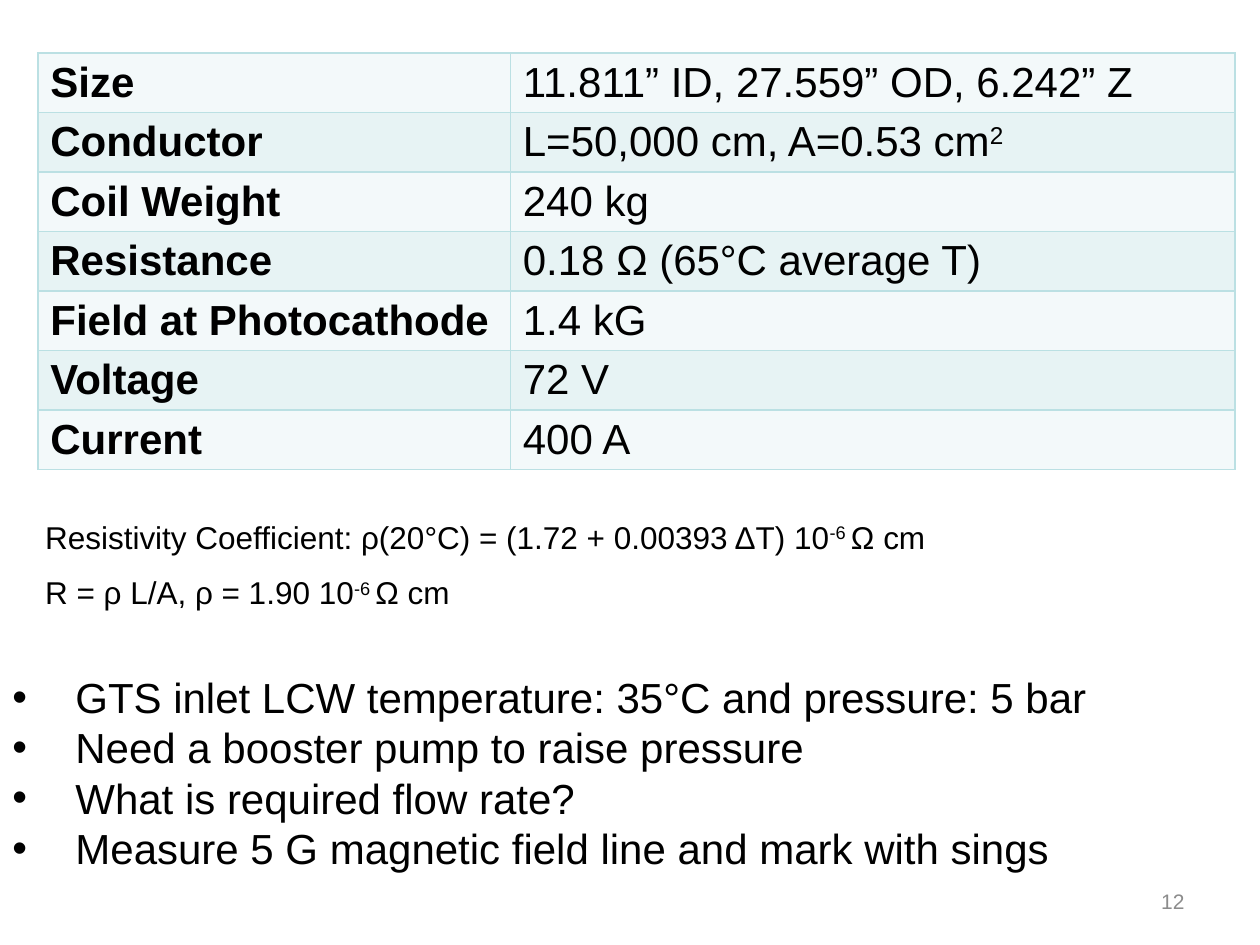
from dataclasses import dataclass

from lxml import etree
from pptx import Presentation
from pptx.dml.color import RGBColor
from pptx.enum.text import MSO_ANCHOR, MSO_AUTO_SIZE, PP_ALIGN
from pptx.oxml.ns import qn
from pptx.util import Emu, Pt

EMU_PER_PX = 9144  # 100 px to the inch
LEFT, RIGHT = PP_ALIGN.LEFT, PP_ALIGN.RIGHT
TOP, MIDDLE = MSO_ANCHOR.TOP, MSO_ANCHOR.MIDDLE
NO_AUTOFIT, GROW = MSO_AUTO_SIZE.NONE, MSO_AUTO_SIZE.SHAPE_TO_FIT_TEXT
FONT = "Arial"
COLORS = {
    "text": "000000",
    "page_number": "8C8C8C",
    "border": "BBE0E3",
    "odd_row": "F3F9FA",
    "even_row": "E7F3F4",
}
COLUMN_WIDTHS = (375, 575)
ROW_HEIGHT = 47
HANGING_INDENT = 50


@dataclass(frozen=True)
class Box:
    left: int
    top: int
    width: int
    height: int


@dataclass(frozen=True)
class Property:
    name: str
    value: str


# Text between carets is superscript.
MAGNET_PROPERTIES = (
    Property("Size", "11.811” ID, 27.559” OD, 6.242” Z"),
    Property("Conductor", "L=50,000 cm, A=0.53 cm^2^"),
    Property("Coil Weight", "240 kg"),
    Property("Resistance", "0.18 Ω (65°C average T)"),
    Property("Field at Photocathode", "1.4 kG"),
    Property("Voltage", "72 V"),
    Property("Current", "400 A"),
)
FORMULAS = (
    (Box(26, 406, 737, 40),
     "Resistivity Coefficient: ρ(20°C) = (1.72 + 0.00393 ΔT) 10^-6 ^Ω cm"),
    (Box(26, 450, 356, 40), "R = ρ L/A, ρ = 1.90 10^-6 ^Ω cm"),
)
COOLING_NOTES = (
    "GTS inlet LCW temperature: 35°C and pressure: 5 bar",
    "Need a booster pump to raise pressure",
    "What is required flow rate?",
    "Measure 5 G magnetic field line and mark with sings",
)


def px(length: int) -> Emu:
    return Emu(length * EMU_PER_PX)


def add_bullet(paragraph) -> None:
    properties = paragraph._p.get_or_add_pPr()
    properties.set("marL", str(px(HANGING_INDENT)))
    properties.set("indent", str(-px(HANGING_INDENT)))
    etree.SubElement(properties, qn("a:buFont")).set("typeface", FONT)
    etree.SubElement(properties, qn("a:buChar")).set("char", "•")


def write_text(text_frame, text: str, *, size: int, color: str = "text",
               bold: bool = False, align=LEFT, bullet: bool = False) -> None:
    """Write one paragraph per line, with text between carets raised."""
    for number, line in enumerate(text.split("\n")):
        paragraph = text_frame.add_paragraph() if number else text_frame.paragraphs[0]
        if bullet:
            add_bullet(paragraph)
        paragraph.alignment = align
        for index, part in enumerate(line.split("^")):
            if not part:
                continue
            run = paragraph.add_run()
            run.text = part
            run.font.name = FONT
            run.font.size = Pt(size)
            run.font.bold = bold
            run.font.color.rgb = RGBColor.from_string(COLORS[color])
            if index % 2:
                run._r.get_or_add_rPr().set("baseline", "30000")


def add_text(slide, box: Box, text: str, *, wrap: bool = False,
             anchor=TOP, auto_size=GROW, **text_format) -> None:
    shape = slide.shapes.add_textbox(px(box.left), px(box.top), px(box.width), px(box.height))
    text_frame = shape.text_frame
    text_frame.word_wrap = wrap
    text_frame.auto_size = auto_size
    text_frame.vertical_anchor = anchor
    write_text(text_frame, text, **text_format)


def format_cell(cell, fill: str) -> None:
    """Give the cell its four borders and its fill."""
    properties = cell._tc.get_or_add_tcPr()
    for side in ("a:lnL", "a:lnR", "a:lnT", "a:lnB"):
        line = etree.SubElement(properties, qn(side), w=str(Pt(1)))
        solid_fill = etree.SubElement(line, qn("a:solidFill"))
        etree.SubElement(solid_fill, qn("a:srgbClr"), val=COLORS["border"])
    cell.fill.solid()
    cell.fill.fore_color.rgb = RGBColor.from_string(COLORS[fill])


def add_property_table(slide, left: int, top: int, properties: tuple[Property, ...]) -> None:
    table = slide.shapes.add_table(
        len(properties), len(COLUMN_WIDTHS), px(left), px(top),
        px(sum(COLUMN_WIDTHS)), px(ROW_HEIGHT * len(properties))).table
    table.first_row = False
    table.horz_banding = False
    for column, width in zip(table.columns, COLUMN_WIDTHS):
        column.width = px(width)
    for row_index, item in enumerate(properties):
        table.rows[row_index].height = px(ROW_HEIGHT)
        fill = "even_row" if row_index % 2 else "odd_row"
        for column_index, text in enumerate((item.name, item.value)):
            cell = table.cell(row_index, column_index)
            format_cell(cell, fill)
            write_text(cell.text_frame, text, size=24, bold=column_index == 0)


def main() -> None:
    presentation = Presentation()
    presentation.slide_width = px(1000)
    presentation.slide_height = px(750)
    slide = presentation.slides.add_slide(presentation.slide_layouts[6])

    add_text(slide, Box(717, 695, 233, 40), "12", wrap=True, anchor=MIDDLE,
             auto_size=NO_AUTOFIT, size=12, color="page_number", align=RIGHT)
    add_property_table(slide, 30, 42, MAGNET_PROPERTIES)
    add_text(slide, Box(0, 528, 889, 172), "\n".join(COOLING_NOTES), size=24, bullet=True)
    for box, formula in FORMULAS:
        add_text(slide, box, formula, size=18)
    presentation.save("out.pptx")


if __name__ == "__main__":
    main()
